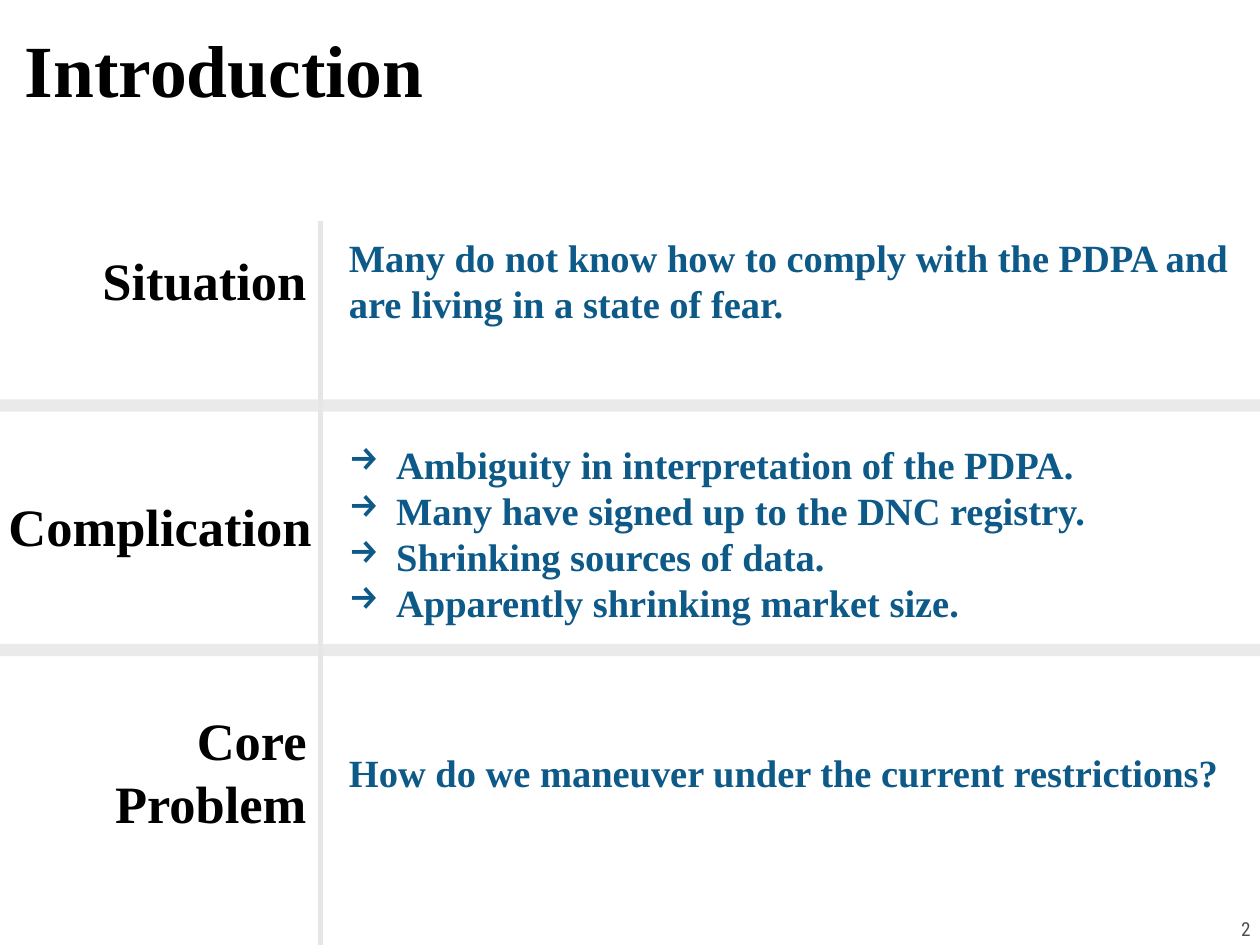
import pptx
import pptx.dml.color
import pptx.enum.shapes
import pptx.enum.text
import pptx.oxml.ns
import pptx.util
from lxml import etree

Pt = pptx.util.Pt
RGBColor = pptx.dml.color.RGBColor
Align = pptx.enum.text.PP_ALIGN
Anchor = pptx.enum.text.MSO_ANCHOR
qn = pptx.oxml.ns.qn

BLACK = RGBColor(0x00, 0x00, 0x00)
BLUE = RGBColor(0x0D, 0x59, 0x88)
GREY = RGBColor(0x4D, 0x4D, 0x4D)
BAND = RGBColor(0x34, 0x34, 0x34)
RULE = RGBColor(0xE6, 0xE6, 0xE6)
WIDTH, HEIGHT = 720, 540


class SlideBuilder:
    """Holds the text style and current slide, and adds each kind of element."""

    serif = "Times New Roman"

    def __init__(self, slide):
        self.slide = slide

    def fill_text(self, holder, lines, size, color, align=Align.LEFT):
        frame = holder.text_frame
        frame.text = "\n".join(lines)
        frame.word_wrap = True
        frame.auto_size = pptx.enum.text.MSO_AUTO_SIZE.NONE
        frame.vertical_anchor = Anchor.MIDDLE
        frame.margin_left = frame.margin_right = 0
        frame.margin_top = frame.margin_bottom = 0
        for paragraph in frame.paragraphs:
            paragraph.alignment = align
            for run in paragraph.runs:
                run.font.name = self.serif
                run.font.size = Pt(size)
                run.font.bold = True
                run.font.color.rgb = color
        return frame

    def title(self, text, left, top, width, height):
        heading = self.slide.shapes.title
        heading.left, heading.top = Pt(left), Pt(top)
        heading.width, heading.height = Pt(width), Pt(height)
        self.fill_text(heading, [text], 42, BLACK)

    def text(self, lines, left, top, width, height, size, color, align=Align.LEFT):
        box = self.slide.shapes.add_textbox(Pt(left), Pt(top), Pt(width), Pt(height))
        return self.fill_text(box, lines, size, color, align)

    def label(self, text, left, top, width, align=Align.RIGHT):
        self.text([text], left, top, width, 34.5, 30, BLACK, align)

    def statement(self, lines, top):
        return self.text(lines, 199.4, top, 506, 78, 22, BLUE)

    def arrow_list(self, lines, top):
        frame = self.statement(lines, top)
        frame.margin_bottom = Pt(26)
        for paragraph in frame.paragraphs:
            properties = paragraph._p.get_or_add_pPr()
            properties.set("marL", str(Pt(27)))
            properties.set("indent", str(-Pt(27)))
            etree.SubElement(properties, qn("a:buChar"), char="→")

    def page_number(self, number):
        frame = self.text([number], 703.4, 521.3, 17, 18.7, 11, GREY, Align.CENTER)
        frame.word_wrap = False
        frame.vertical_anchor = Anchor.TOP
        frame.margin_left = frame.margin_right = Pt(5)
        frame.margin_top = frame.margin_bottom = Pt(3)
        font = frame.paragraphs[0].runs[0].font
        font.name = "Roboto Condensed"
        font.bold = False

    def band(self, top):
        divider = self.slide.shapes.add_shape(
            pptx.enum.shapes.MSO_SHAPE.RECTANGLE, 0, Pt(top), Pt(WIDTH), Pt(7))
        divider.shadow.inherit = False
        divider.line.fill.background()
        divider.fill.solid()
        divider.fill.fore_color.rgb = BAND
        tint = divider._element.spPr.find(qn("a:solidFill"))[0]
        etree.SubElement(tint, qn("a:alpha"), val="10000")

    def vertical_rule(self, x, top, bottom):
        rule = self.slide.shapes.add_connector(
            pptx.enum.shapes.MSO_CONNECTOR.STRAIGHT, Pt(x), Pt(top), Pt(x), Pt(bottom))
        rule.line.color.rgb = RULE
        rule.line.width = Pt(3)
        etree.SubElement(rule._element.spPr, qn("a:effectLst"))


def main():
    deck = pptx.Presentation()
    deck.slide_width, deck.slide_height = Pt(WIDTH), Pt(HEIGHT)
    builder = SlideBuilder(deck.slides.add_slide(deck.slide_layouts.get_by_name("Title Only")))

    builder.title("Introduction", 14.2, 14.2, 692, 49)
    builder.page_number("2")

    builder.label("Situation", 14.2, 142.5, 161)
    builder.label("Complication", 0, 283, 183, Align.CENTER)
    builder.label("Core Problem", 14.2, 423.5, 161)

    builder.statement(
        ["Many do not know how to comply with the PDPA and are living in a state of fear."], 121)
    builder.arrow_list([
        "Ambiguity in interpretation of the PDPA.",
        "Many have signed up to the DNC registry.",
        "Shrinking sources of data.",
        "Apparently shrinking market size.",
    ], 278.6)
    builder.statement(["How do we maneuver under the current restrictions?"], 402)

    for top in (228.2, 368):
        builder.band(top)
    builder.vertical_rule(183, 126, HEIGHT)

    deck.save("out.pptx")


if __name__ == "__main__":
    main()
